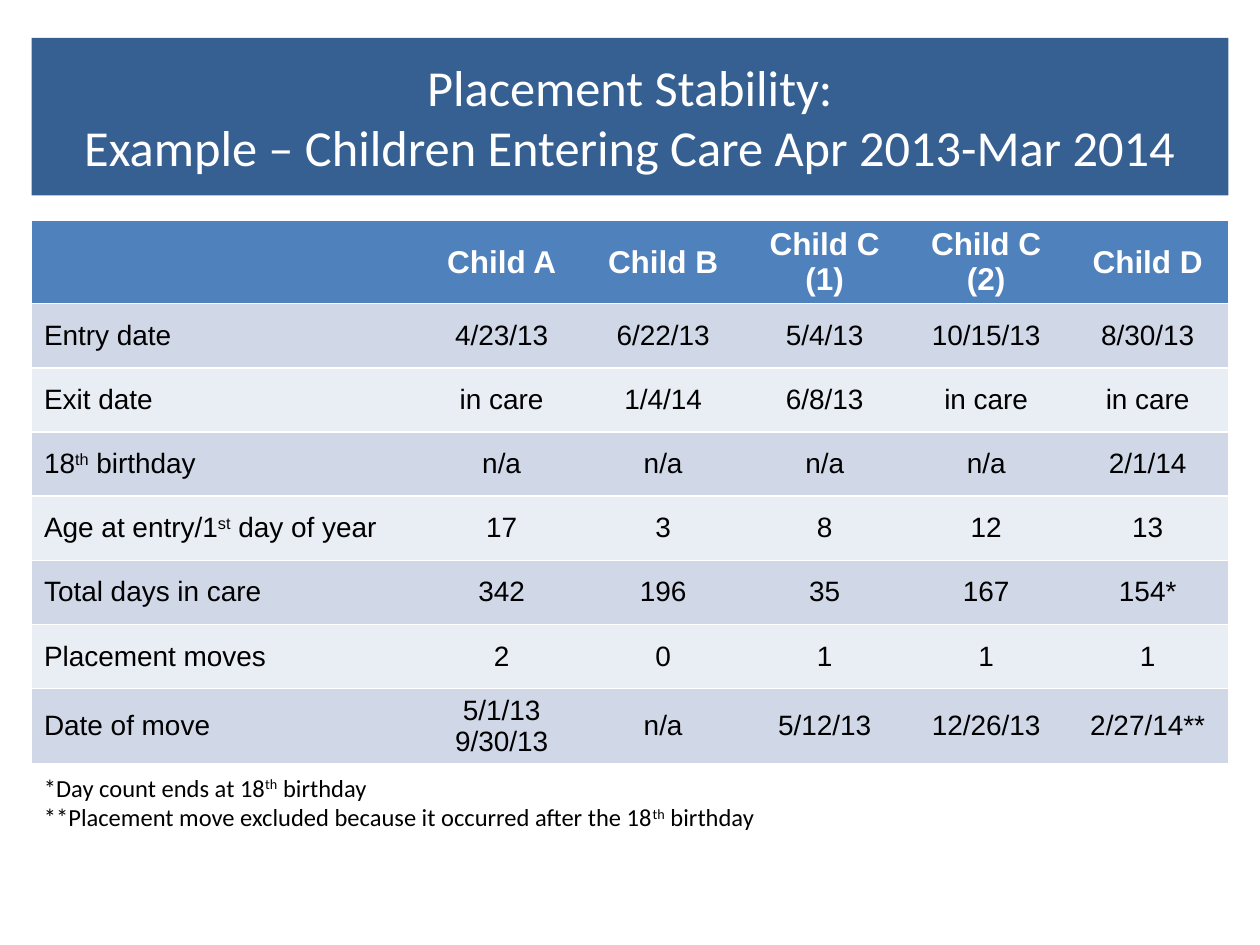
import pptx
import pptx.dml.color
import pptx.enum.text
import pptx.oxml
import pptx.oxml.ns
import pptx.util

Pt = pptx.util.Pt
ALIGN = pptx.enum.text.PP_ALIGN
MIDDLE = pptx.enum.text.MSO_ANCHOR.MIDDLE

HUES = {"banner": "376092", "head": "4F81BD", "odd": "D0D8E8",
        "even": "E9EDF4", "white": "FFFFFF", "black": "000000"}

# A pair of ^ marks encloses superscript text
ROWS = [
    ["", "Child A", "Child B", "Child C (1)", "Child C (2)", "Child D"],
    ["Entry date", "4/23/13", "6/22/13", "5/4/13", "10/15/13", "8/30/13"],
    ["Exit date", "in care", "1/4/14", "6/8/13", "in care", "in care"],
    ["18^th^ birthday", "n/a", "n/a", "n/a", "n/a", "2/1/14"],
    ["Age at entry/1^st^ day of year", "17", "3", "8", "12", "13"],
    ["Total days in care", "342", "196", "35", "167", "154*"],
    ["Placement moves", "2", "0", "1", "1", "1"],
    ["Date of move", "5/1/13\n9/30/13", "n/a", "5/12/13", "12/26/13",
     "2/27/14**"],
]
NOTES = ("*Day count ends at 18^th^ birthday\n"
         "**Placement move excluded because it occurred after the "
         "18^th^ birthday")


def color(name):
    return pptx.dml.color.RGBColor.from_string(HUES[name])


def style(para, face, size, hue, align, bold=False):
    para.alignment = align
    para.font.name = face
    para.font.size = Pt(size)
    para.font.bold = bold
    para.font.color.rgb = color(hue)


def write(frame, text, *look):
    for i, line in enumerate(text.split("\n")):
        para = frame.add_paragraph() if i else frame.paragraphs[0]
        style(para, *look)
        for j, part in enumerate(line.split("^")):
            if not part:
                continue
            run = para.add_run()
            run.text = part
            if j % 2:
                run._r.get_or_add_rPr().set("baseline", "30000")


def rule(cell):
    """White lines above and below the cell, none at its sides."""
    props = cell._tc.get_or_add_tcPr()
    white = f'<a:solidFill><a:srgbClr val="{HUES["white"]}"/></a:solidFill>'
    for side in "LRTB":
        paint = white if side in "TB" else "<a:noFill/>"
        props.append(pptx.oxml.parse_xml(
            f'<a:ln{side} {pptx.oxml.ns.nsdecls("a")} w="{Pt(1)}">'
            f'{paint}</a:ln{side}>'))


def add_title(slide, left, top, width, height):
    title = slide.shapes.title
    title.left, title.top = Pt(left), Pt(top)
    title.width, title.height = Pt(width), Pt(height)
    title.fill.solid()
    title.fill.fore_color.rgb = color("banner")
    frame = title.text_frame
    frame.vertical_anchor = MIDDLE
    frame.text = ("Placement Stability:\v"
                  "Example – Children Entering Care Apr 2013-Mar 2014")
    style(frame.paragraphs[0], "Calibri", 28.8, "white", ALIGN.CENTER)


def add_grid(slide, left, top, width, height):
    count = len(ROWS[0])
    grid = slide.shapes.add_table(len(ROWS), count, Pt(left), Pt(top),
                                  Pt(width), Pt(height)).table
    # Equal child columns; taller first and last rows
    child, tall = 92.3, 42
    for i, col in enumerate(grid.columns):
        col.width = Pt(child if i else width - child * (count - 1))
    short = (height - 2 * tall) / (len(ROWS) - 2)
    for i, row in enumerate(grid.rows):
        row.height = Pt(tall if i in (0, len(ROWS) - 1) else short)

    for r, texts in enumerate(ROWS):
        band = "head" if r == 0 else "odd" if r % 2 else "even"
        for c, text in enumerate(texts):
            cell = grid.cell(r, c)
            rule(cell)
            cell.fill.solid()
            cell.fill.fore_color.rgb = color(band)
            cell.vertical_anchor = MIDDLE
            write(cell.text_frame, text, "Arial", 16 if r else 18,
                  "black" if r else "white",
                  ALIGN.CENTER if c else ALIGN.LEFT, r == 0)


def add_notes(slide, left, top, width, height):
    box = slide.shapes.add_textbox(Pt(left), Pt(top), Pt(width), Pt(height))
    frame = box.text_frame
    frame.word_wrap = False
    frame.auto_size = pptx.enum.text.MSO_AUTO_SIZE.SHAPE_TO_FIT_TEXT
    write(frame, NOTES, "Calibri", 14, "black", ALIGN.LEFT)


def main():
    deck = pptx.Presentation()
    deck.slide_width, deck.slide_height = Pt(720), Pt(540)
    slide = deck.slides.add_slide(deck.slide_layouts[5])
    left, width = 18, 684
    add_title(slide, left, 21.6, width, 90)
    add_grid(slide, left, 126, width, 304)
    add_notes(slide, left, 438, 425.5, 41)
    deck.save("out.pptx")


if __name__ == "__main__":
    main()
